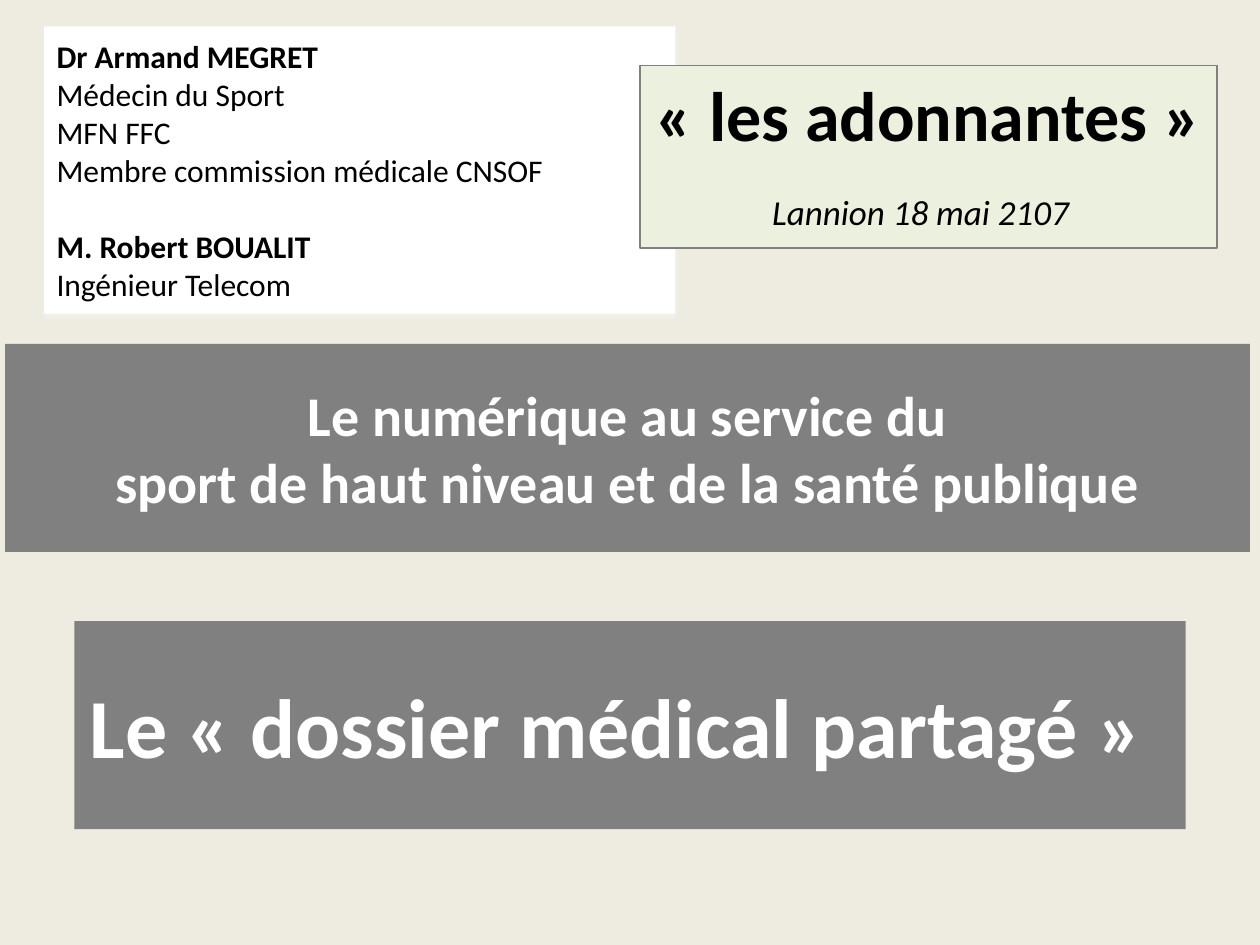
from dataclasses import dataclass

from lxml import etree
from pptx import Presentation, util as u
from pptx.dml.color import RGBColor
from pptx.enum import shapes, text
from pptx.oxml import ns


@dataclass(frozen=True)
class Theme:
    font: str = "Calibri"
    page: str = "EEECE1"
    white: str = "FFFFFF"
    black: str = "000000"
    grey: str = "808080"
    green: str = "EBF1DE"
    small: int = 18
    date: int = 20
    title: int = 32
    event: int = 40
    topic: int = 48


class Deck:
    def __init__(self, theme):
        self.theme = theme
        self.prs = Presentation()
        self.prs.slide_width, self.prs.slide_height = u.Inches(10), u.Inches(7.5)
        self.s = self.prs.slides.add_slide(self.prs.slide_layouts[6])
        fill = self.s.background.fill
        fill.solid()
        fill.fore_color.rgb = RGBColor.from_string(theme.page)

    def box(self, x, y, w, h, fill, line=None, wrap=True):
        """Rectangle placed in percent of the slide's width and height."""
        W, H = self.prs.slide_width, self.prs.slide_height
        sp = self.s.shapes.add_shape(
            shapes.MSO_SHAPE.RECTANGLE,
            *(round(share * side / 100) for share, side in zip((x, y, w, h), (W, H, W, H))))
        sp.shadow.inherit = False
        sp.fill.solid()
        sp.fill.fore_color.rgb = RGBColor.from_string(fill)
        if line:
            sp.line.color.rgb = RGBColor.from_string(line)
            sp.line.width = u.Pt(0.75)
        else:
            sp.line.fill.background()
        sp.text_frame.word_wrap = wrap
        sp.text_frame.vertical_anchor = text.MSO_ANCHOR.MIDDLE
        return sp

    def glow(self, sp, color, alpha, blur, dist):
        """Soft shadow falling straight down."""
        effects = sp._element.spPr.find(ns.qn("a:effectLst"))
        shadow = etree.SubElement(
            effects, ns.qn("a:outerShdw"), blurRad=str(u.Pt(blur)),
            dist=str(u.Pt(dist)), dir="5400000", rotWithShape="0")
        clr = etree.SubElement(shadow, ns.qn("a:srgbClr"), val=color)
        etree.SubElement(clr, ns.qn("a:alpha"), val=str(alpha * 1000))

    def para(self, sp, first=False, center=True, before=0):
        tf = sp.text_frame
        p = tf.paragraphs[0] if first else tf.add_paragraph()
        p.alignment = text.PP_ALIGN.CENTER if center else text.PP_ALIGN.LEFT
        p.space_before = u.Pt(before)
        return p

    def run(self, p, words, size, color, bold=True, italic=False):
        r = p.add_run()
        r.text = words
        f = r.font
        f.name, f.size, f.bold, f.italic = self.theme.font, u.Pt(size), bold, italic
        f.color.rgb = RGBColor.from_string(color)


def main():
    t = Theme()
    d = Deck(t)

    # Speakers: (line, bold, space before)
    speakers = [
        ("Dr Armand MEGRET", True, 0),
        ("Médecin du Sport", False, 0),
        ("MFN FFC", False, 0),
        ("Membre commission médicale CNSOF", False, 0),
        ("M. Robert BOUALIT", True, 22),
        ("Ingénieur Telecom", False, 0),
    ]
    sp = d.box(3.5, 2.8, 50.1, 30.4, t.white)
    d.glow(sp, t.white, 35, 3.1, 1.8)
    for i, (words, bold, before) in enumerate(speakers):
        p = d.para(sp, first=i == 0, center=False, before=before)
        d.run(p, words, t.small, t.black, bold)

    # Title band
    sp = d.box(0.4, 36.4, 98.8, 22, t.grey)
    p = d.para(sp, first=True)
    d.run(p, "Le numérique au service du", t.title, t.white)
    p.add_line_break()
    d.run(p, "sport de haut niveau et de la santé publique", t.title, t.white)

    # Topic band, its text set slightly left of centre
    sp = d.box(5.9, 65.73, 88.2, 22, t.grey)
    sp.text_frame.margin_right = u.Inches(0.31)
    p = d.para(sp, first=True, before=t.topic * 0.2)
    d.run(p, "Le « dossier médical partagé »", t.topic, t.white)

    # Event and date
    sp = d.box(50.8, 6.93, 45.8, 19.33, t.green, line=t.grey, wrap=False)
    sp.text_frame.vertical_anchor = text.MSO_ANCHOR.TOP
    d.run(d.para(sp, first=True), "« les adonnantes »", t.event, t.black)
    p = d.para(sp)
    d.run(p, "Lannion 18 mai 2107", t.date, t.black, bold=False, italic=True)
    d.run(p, "\N{NO-BREAK SPACE}", t.event, t.black)

    d.prs.save("out.pptx")


if __name__ == "__main__":
    main()
